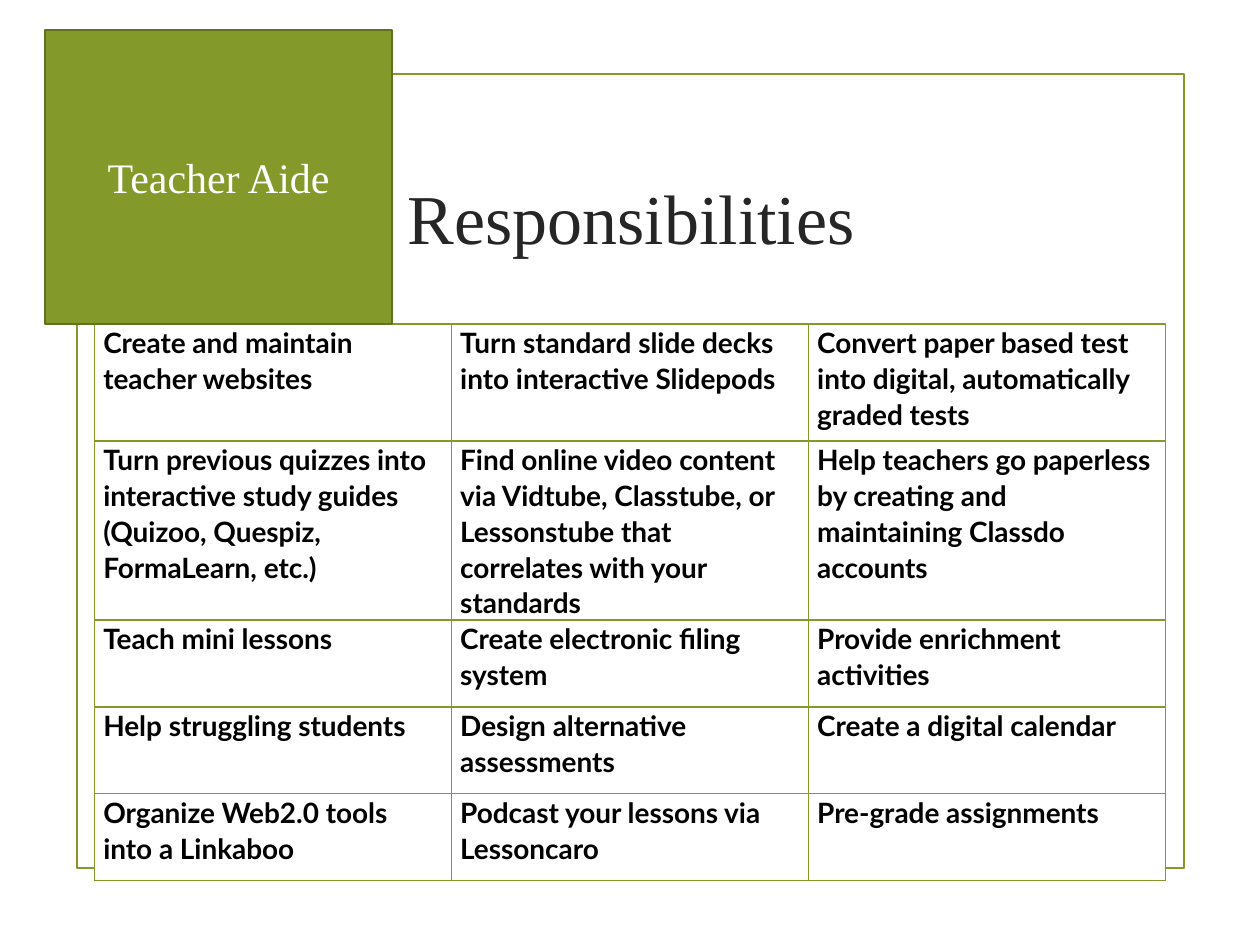
import dataclasses

import lxml.etree
import pptx
import pptx.dml.color
import pptx.enum.shapes
import pptx.enum.text
import pptx.oxml.ns
import pptx.util

Inches = pptx.util.Inches
Pt = pptx.util.Pt
CENTER = pptx.enum.text.PP_ALIGN.CENTER
LEFT = pptx.enum.text.PP_ALIGN.LEFT
MIDDLE = pptx.enum.text.MSO_ANCHOR.MIDDLE


@dataclasses.dataclass(frozen=True)
class Theme:
    """Colours, fonts and type sizes of the page."""

    accent: str = "83992A"
    edge: str = "61711F"
    title_ink: str = "262626"
    table_ink: str = "000000"
    paper: str = "FFFFFF"
    heading_font: str = "Times New Roman"
    table_font: str = "Lato"
    title_size: int = 40
    label_size: int = 24
    table_size: int = 16
    rule: float = 1.25
    border: float = 1


def rgb(code):
    """Turn a hex code into a colour."""
    return pptx.dml.color.RGBColor.from_string(code)


def write_text(frame, text, *, font, size, color, bold=False, align=LEFT, spacing=None):
    """Write one formatted paragraph into a text frame."""
    frame.word_wrap = True
    para = frame.paragraphs[0]
    para.alignment = align
    para.line_spacing = spacing
    span = para.add_run()
    span.text = text
    span.font.name = font
    span.font.size = Pt(size)
    span.font.bold = bold
    span.font.color.rgb = rgb(color)


class PageBuilder:
    """Holds the theme and the current page, and draws each kind of element."""

    def __init__(self, page, theme):
        """Keep the page and its theme."""
        self.page = page
        self.theme = theme

    def add_line_style(self, line, color):
        """Give an outline its colour and width."""
        line.color.rgb = rgb(color)
        line.width = Pt(self.theme.rule)

    def add_box(self, left, top, width, height, line, fill=None):
        """Draw a rectangle, hollow unless a fill is given."""
        box = self.page.shapes.add_shape(
            pptx.enum.shapes.MSO_SHAPE.RECTANGLE,
            Inches(left), Inches(top), Inches(width), Inches(height))
        box.shadow.inherit = False
        if fill:
            box.fill.solid()
            box.fill.fore_color.rgb = rgb(fill)
        else:
            box.fill.background()
        self.add_line_style(box.line, line)
        return box

    def add_rule(self, left, right, top):
        """Draw a horizontal rule."""
        rule = self.page.shapes.add_connector(
            pptx.enum.shapes.MSO_CONNECTOR.STRAIGHT,
            Inches(left), Inches(top), Inches(right), Inches(top))
        self.add_line_style(rule.line, self.theme.accent)
        lxml.etree.SubElement(rule.element.spPr, pptx.oxml.ns.qn("a:effectLst"))

    def add_title(self, text, left, top, width, height):
        """Place and fill the title placeholder."""
        title = self.page.shapes.title
        title.left, title.top = Inches(left), Inches(top)
        title.width, title.height = Inches(width), Inches(height)
        title.text_frame.vertical_anchor = MIDDLE
        write_text(title.text_frame, text, font=self.theme.heading_font,
                   size=self.theme.title_size, color=self.theme.title_ink, align=CENTER)

    def add_label(self, text, left, top, width, height):
        """Draw a filled box with a centred label."""
        box = self.add_box(left, top, width, height, self.theme.edge, self.theme.accent)
        box.text_frame.vertical_anchor = MIDDLE
        write_text(box.text_frame, text, font=self.theme.heading_font,
                   size=self.theme.label_size, color=self.theme.paper, align=CENTER)

    def add_borders(self, cell):
        """Give a cell a line on all four sides."""
        properties = cell._tc.get_or_add_tcPr()
        for side in ("lnL", "lnR", "lnT", "lnB"):
            line = lxml.etree.SubElement(
                properties, pptx.oxml.ns.qn(f"a:{side}"), w=str(Pt(self.theme.border)))
            fill = lxml.etree.SubElement(line, pptx.oxml.ns.qn("a:solidFill"))
            lxml.etree.SubElement(
                fill, pptx.oxml.ns.qn("a:srgbClr"), val=self.theme.accent)

    def add_table(self, rows, left, top, width, heights):
        """Draw a table with equal columns and bordered cells."""
        table = self.page.shapes.add_table(
            len(rows), len(rows[0]), Inches(left), Inches(top),
            Inches(width), Inches(sum(heights))).table
        table.first_row = table.horz_banding = False
        for row, height, texts in zip(table.rows, heights, rows):
            row.height = Inches(height)
            for cell, text in zip(row.cells, texts):
                cell.margin_left = cell.margin_right = Inches(0.07)
                cell.margin_top = cell.margin_bottom = 0
                self.add_borders(cell)
                cell.fill.solid()
                cell.fill.fore_color.rgb = rgb(self.theme.paper)
                write_text(cell.text_frame, text, font=self.theme.table_font,
                           size=self.theme.table_size, color=self.theme.table_ink,
                           bold=True, spacing=1.07)


RESPONSIBILITIES = [
    ("Create and maintain teacher websites",
     "Turn standard slide decks into interactive Slidepods",
     "Convert paper based test into digital, automatically graded tests"),
    ("Turn previous quizzes into interactive study guides (Quizoo, Quespiz, FormaLearn, etc.)",
     "Find online video content via Vidtube, Classtube, or Lessonstube that "
     "correlates with your standards",
     "Help teachers go paperless by creating and maintaining Classdo accounts"),
    ("Teach mini lessons", "Create electronic filing system",
     "Provide enrichment activities"),
    ("Help struggling students", "Design alternative assessments",
     "Create a digital calendar"),
    ("Organize Web2.0 tools into a Linkaboo", "Podcast your lessons via Lessoncaro",
     "Pre-grade assignments"),
]


def main():
    """Build the page and save the deck."""
    deck = pptx.Presentation()
    deck.slide_width, deck.slide_height = Inches(10), Inches(7.5)
    theme = Theme()
    builder = PageBuilder(deck.slides.add_slide(deck.slide_layouts[5]), theme)
    builder.add_box(0.61, 0.59, 8.79, 6.3, theme.accent)
    builder.add_rule(1.4, 8.61, 2.58)
    builder.add_title("Responsibilities", 1.29, 1, 7.44, 1.43)
    builder.add_table(RESPONSIBILITIES, 0.75, 2.57, 8.5, [0.93, 1.22, 0.69, 0.69, 0.69])
    builder.add_label("Teacher Aide", 0.36, 0.24, 2.75, 2.33)
    deck.save("out.pptx")


if __name__ == "__main__":
    main()
